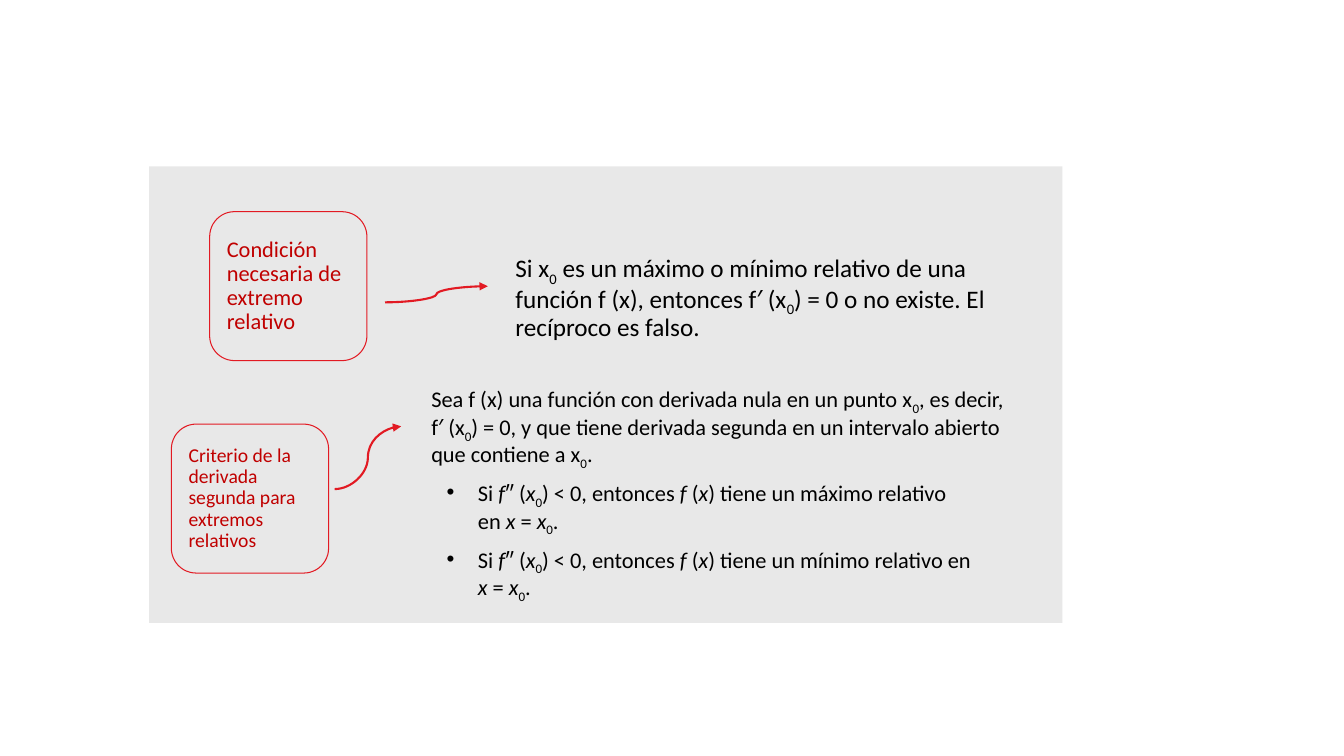
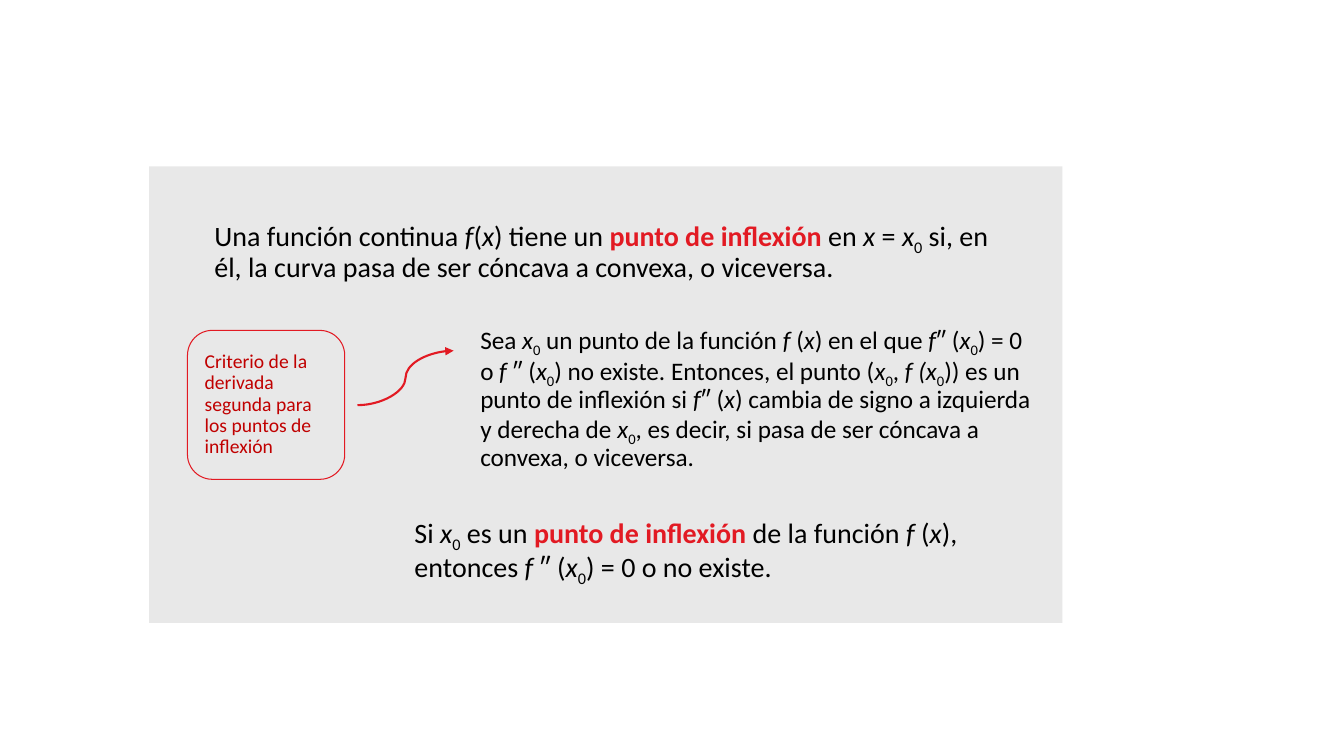
from dataclasses import dataclass

from lxml.etree import SubElement
from pptx import Presentation
from pptx.dml.color import RGBColor
from pptx.enum.shapes import MSO_CONNECTOR, MSO_SHAPE
from pptx.enum.text import MSO_ANCHOR, MSO_AUTO_SIZE, PP_ALIGN
from pptx.oxml.ns import qn
from pptx.util import Inches, Pt

RECT, ROUND = MSO_SHAPE.RECTANGLE, MSO_SHAPE.ROUNDED_RECTANGLE
CURVE = MSO_CONNECTOR.CURVE
TOP, MIDDLE = MSO_ANCHOR.TOP, MSO_ANCHOR.MIDDLE
FIXED = MSO_AUTO_SIZE.NONE
LEFT = PP_ALIGN.LEFT
ITALIC, SUB, KEY = "*", "~", "#"


@dataclass(frozen=True)
class Theme:
    font: str = "Calibri"
    ink: RGBColor = RGBColor(0x00, 0x00, 0x00)
    red: RGBColor = RGBColor(0xE2, 0x1A, 0x23)
    dark: RGBColor = RGBColor(0xC0, 0x00, 0x00)
    gray: RGBColor = RGBColor(0xE5, 0xE5, 0xE5)
    alpha: int = 85
    small: int = 14
    text: int = 16
    large: int = 18
    lead: int = 20
    thin: float = 0.75
    thick: float = 1.5
    indent: float = 0.31


BAND = (11.1, 22, 67.95, 60.4)
CARD = (11.7, 19.7)


def apply(item, values):
    for name, value in values.items():
        setattr(item, name, value)


def pieces(text):
    """Yield pieces of text with the set of marks that are on for each."""
    marks, piece = frozenset(), ""
    for char in text:
        if char in (ITALIC, SUB, KEY):
            if piece:
                yield piece, marks
            marks, piece = marks ^ {char}, ""
        else:
            piece += char
    if piece:
        yield piece, marks


class Deck:
    """Holds the style and the current slide; lengths are percent of the slide."""

    def __init__(self, theme):
        self.theme = theme
        self.show = Presentation()
        self.show.slide_width = Inches(13.33)
        self.show.slide_height = Inches(7.5)
        self.layout = self.show.slide_layouts[1]
        self.slide = None

    def scale(self, *spots):
        """Turn alternating x and y shares into lengths."""
        sides = self.show.slide_width, self.show.slide_height
        return [int(spot * sides[i % 2] / 100) for i, spot in enumerate(spots)]

    def page(self):
        self.slide = self.show.slides.add_slide(self.layout)
        title = self.slide.shapes.title.element
        title.getparent().remove(title)

    def band(self):
        """Draw the gray panel and move it to the shared layout."""
        panel = self.slide.shapes.add_shape(RECT, *self.scale(*BAND))
        panel.shadow.inherit = False
        panel.fill.solid()
        panel.fill.fore_color.rgb = self.theme.gray
        panel.line.fill.background()
        node = panel.element
        tint = node.spPr.find(".//" + qn("a:srgbClr"))
        SubElement(tint, qn("a:alpha"), val=str(self.theme.alpha * 1000))
        node.nvSpPr.cNvPr.set("id", "20")
        self.layout.shapes.element.insert(2, node)

    def label(self, shape, text, size, color, anchor=TOP, bullet=False):
        frame = shape.text_frame
        apply(frame, {"word_wrap": True, "auto_size": FIXED,
                      "vertical_anchor": anchor})
        para = frame.paragraphs[0]
        props = para._p.get_or_add_pPr()
        indent = Inches(self.theme.indent) if bullet else 0
        props.set("marL", str(indent))
        props.set("indent", str(-indent))
        apply(para, {"alignment": LEFT, "line_spacing": 0.9,
                     "space_before": Pt(0), "space_after": Pt(6)})
        if bullet:
            SubElement(props, qn("a:buFont"), typeface="Arial")
            SubElement(props, qn("a:buChar"), char="•")
        else:
            SubElement(props, qn("a:buNone"))
        for piece, marks in pieces(text):
            run = para.add_run()
            run.text = piece
            apply(run.font, {"name": self.theme.font, "size": Pt(size),
                             "italic": ITALIC in marks, "bold": KEY in marks})
            run.font.color.rgb = self.theme.red if KEY in marks else color
            if SUB in marks:
                run._r.get_or_add_rPr().set("baseline", "-25000")

    def body(self, spot, text, size):
        shape = self.slide.placeholders[1]
        names = "left", "top", "width", "height"
        apply(shape, dict(zip(names, self.scale(*spot))))
        self.label(shape, text, size, self.theme.ink)

    def note(self, spot, text, size, bullet=False):
        shape = self.slide.shapes.add_textbox(*self.scale(*spot))
        self.label(shape, text, size, self.theme.ink, bullet=bullet)

    def card(self, left, top, text, size):
        shape = self.slide.shapes.add_shape(ROUND, *self.scale(left, top, *CARD))
        shape.shadow.inherit = False
        shape.fill.background()
        self.stroke(shape.line, self.theme.thin)
        self.label(shape, text, size, self.theme.dark, MIDDLE)

    def stroke(self, line, width):
        line.color.rgb = self.theme.red
        line.width = Pt(width)

    def arrow(self, *ends):
        link = self.slide.shapes.add_connector(CURVE, *self.scale(*ends))
        self.stroke(link.line, self.theme.thick)
        props = link.element.spPr
        SubElement(props.find(qn("a:ln")), qn("a:tailEnd"), type="triangle")
        SubElement(props, qn("a:effectLst"))


def extremes(deck):
    look = deck.theme
    deck.body((37.6, 32.8, 38.5, 10.1),
              "Si x~0~ es un máximo o mínimo relativo de una función f (x), "
              "entonces f′ (x~0~) = 0 o no existe. El recíproco es falso.",
              look.large)
    deck.card(15.6, 28, "Condición necesaria de extremo relativo", look.text)
    deck.arrow(28.65, 40, 36.3, 37.87)
    deck.card(12.75, 56.1,
              "Criterio de la derivada segunda para extremos relativos",
              look.small)
    deck.note((31.35, 50.4, 44.6, 11.9),
              "Sea f (x) una función con derivada nula en un punto x~0~, es "
              "decir, f′ (x~0~) = 0, y que tiene derivada segunda en un "
              "intervalo abierto que contiene a x~0~.", look.text)
    for row, kind in enumerate(("máximo", "mínimo")):
        deck.note((32.5, 62.8 + 8.8 * row, 40.7, 4.3),
                  "Si *f*″ (*x*~0~) < 0, entonces *f *(*x*) tiene un "
                  f"{kind} relativo en *x *= *x*~0~.", look.text, True)
    deck.arrow(24.9, 64.7, 29.85, 56.4)


def bends(deck):
    look = deck.theme
    deck.body((15.2, 28.3, 59.3, 8.3),
              "Una función continua *f*(*x*) tiene un #punto de inflexión #en "
              "*x *= *x*~0~ si, en él, la curva pasa de ser cóncava a "
              "convexa, o viceversa.", look.lead)
    deck.card(13.95, 43.7,
              "Criterio de la derivada segunda para los puntos de inflexión",
              look.small)
    deck.note((35, 42.3, 42.5, 21.3),
              "Sea *x*~0~ un punto de la función *f *(*x*) en el que *f*″ "
              "(*x*~0~) = 0 o *f *″ (*x*~0~) no existe. Entonces, el punto "
              "(*x*~0~, *f (x*~0~)) es un punto de inflexión si *f*″ (*x*) "
              "cambia de signo a izquierda y derecha de *x*~0~, es decir, si "
              "pasa de ser cóncava a convexa, o viceversa.", look.large)
    deck.note((30.1, 67.6, 47.2, 8.3),
              "Si *x*~0~ es un #punto de inflexión #de la función *f *(*x*), "
              "entonces *f *″ (*x*~0~) = 0 o no existe.", look.lead)
    deck.arrow(26.6, 53.6, 33.75, 46.4)


def main():
    deck = Deck(Theme())
    deck.page()
    deck.band()
    extremes(deck)
    deck.page()
    bends(deck)
    deck.show.save("out.pptx")


if __name__ == "__main__":
    main()
